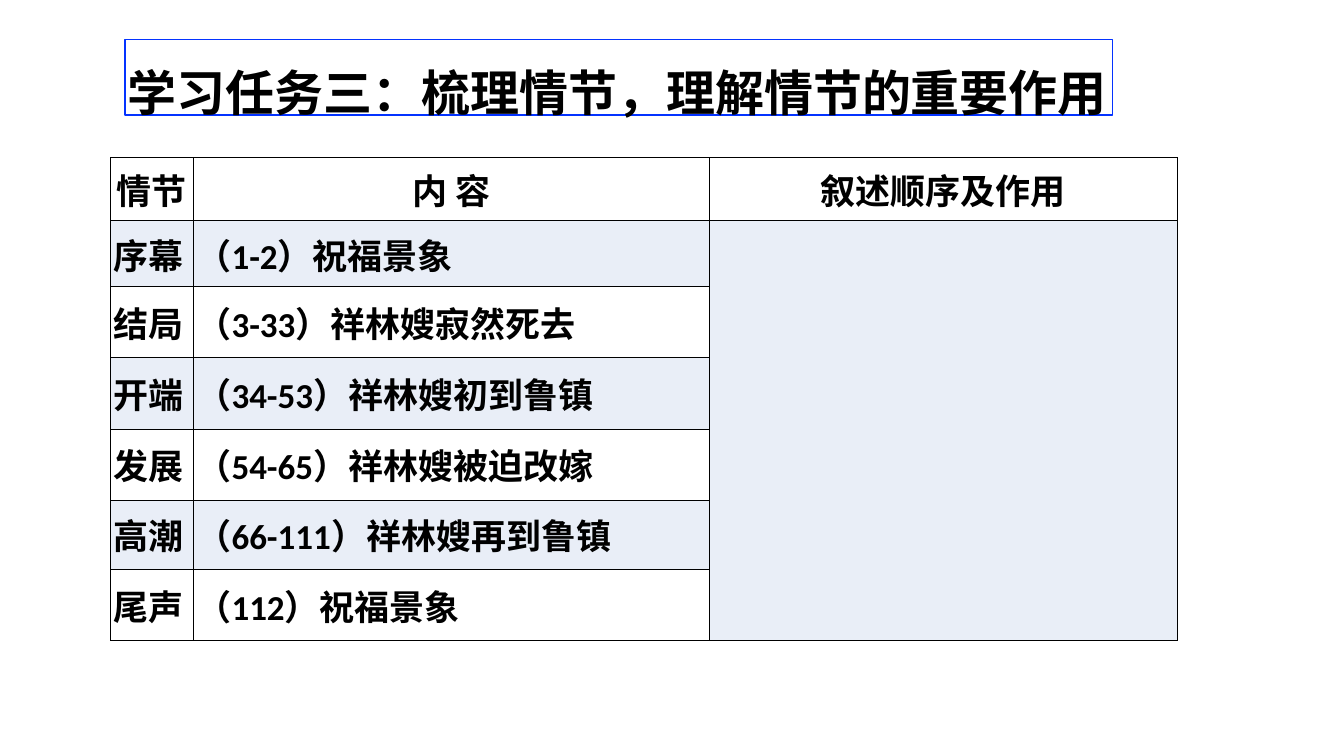
from lxml.etree import SubElement
from pptx import Presentation
from pptx.dml.color import RGBColor as RGB
from pptx.enum.shapes import MSO_SHAPE as SHAPE
from pptx.enum.text import MSO_ANCHOR as ANCHOR, PP_ALIGN as ALIGN
from pptx.oxml.ns import qn
from pptx.util import Inches, Pt

COLORS = {"ink": "000000", "band": "E9EEF7", "frame": "0433FF"}
CJK, LATIN = "Noto Sans CJK SC", "Calibri"
INSET = Inches(0.06)
MARGINS = {f"margin_{side}": INSET for side in ("left", "right", "top", "bottom")}


def write(tf, text, size, font, align):
    """Put one bold paragraph into a text frame."""
    p = tf.paragraphs[0]
    p.alignment = align
    r = p.add_run()
    r.text = text
    for name, value in {"size": Pt(size), "bold": True, "name": font}.items():
        setattr(r.font, name, value)
    r.font.color.rgb = RGB.from_string(COLORS["ink"])
    SubElement(r.font._element, qn("a:ea"), typeface=CJK)
    return p


def style_cell(cell, banded):
    """Give a cell its margins, black borders and fill."""
    for name, value in {**MARGINS, "vertical_anchor": ANCHOR.MIDDLE}.items():
        setattr(cell, name, value)
    tc_pr = cell._tc.get_or_add_tcPr()
    for side in ("lnL", "lnR", "lnT", "lnB"):
        ln = SubElement(tc_pr, qn(f"a:{side}"), w=str(Pt(1)))
        fill = SubElement(ln, qn("a:solidFill"))
        SubElement(fill, qn("a:srgbClr"), val=COLORS["ink"])
    if banded:
        cell.fill.solid()
        cell.fill.fore_color.rgb = RGB.from_string(COLORS["band"])
    else:
        cell.fill.background()


prs = Presentation()
prs.slide_width, prs.slide_height = Inches(26.67), Inches(15)
s = prs.slides.add_slide(prs.slide_layouts[6])

# Plot table
header = ["情节", "内\u00a0容", "叙述顺序及作用"]
plot = [
    ("序幕", "（1-2）祝福景象"),
    ("结局", "（3-33）祥林嫂寂然死去"),
    ("开端", "（34-53）祥林嫂初到鲁镇"),
    ("发展", "（54-65）祥林嫂被迫改嫁"),
    ("高潮", "（66-111）祥林嫂再到鲁镇"),
    ("尾声", "（112）祝福景象"),
]
widths = [1.65, 10.23, 9.3]
heights = [1.25, 1.31, 1.39, 1.44, 1.4, 1.38, 1.4]
table = s.shapes.add_table(
    len(heights), len(widths), Inches(2.19), Inches(3.13),
    Inches(sum(widths)), Inches(sum(heights))).table
table.first_row = table.horz_banding = False
for column, width in zip(table.columns, widths):
    column.width = Inches(width)
for row, height in zip(table.rows, heights):
    row.height = Inches(height)

for i, texts in enumerate([header, *plot]):
    for j in range(len(widths)):
        cell = table.cell(i, j)
        style_cell(cell, banded=i > 0 if j == 2 else i % 2 == 1)
        if j < len(texts):
            font = LATIN if i and j else CJK
            write(cell.text_frame, texts[j], 50, font, ALIGN.LEFT if i else ALIGN.CENTER)
table.cell(1, 2).merge(table.cell(len(plot), 2))

# Title
sp = s.shapes.add_shape(SHAPE.RECTANGLE, Inches(2.48), Inches(0.78), Inches(19.6), Inches(1.5))
sp.shadow.inherit = False
sp.fill.background()
sp.line.color.rgb = RGB.from_string(COLORS["frame"])
sp.line.width = Pt(2)
tf = sp.text_frame
for name, value in {**MARGINS, "word_wrap": False, "vertical_anchor": ANCHOR.MIDDLE}.items():
    setattr(tf, name, value)
p = write(tf, "学习任务三：梳理情节，理解情节的重要作用", 70, LATIN, ALIGN.JUSTIFY)
p.line_spacing = 1.5

prs.save("out.pptx")
